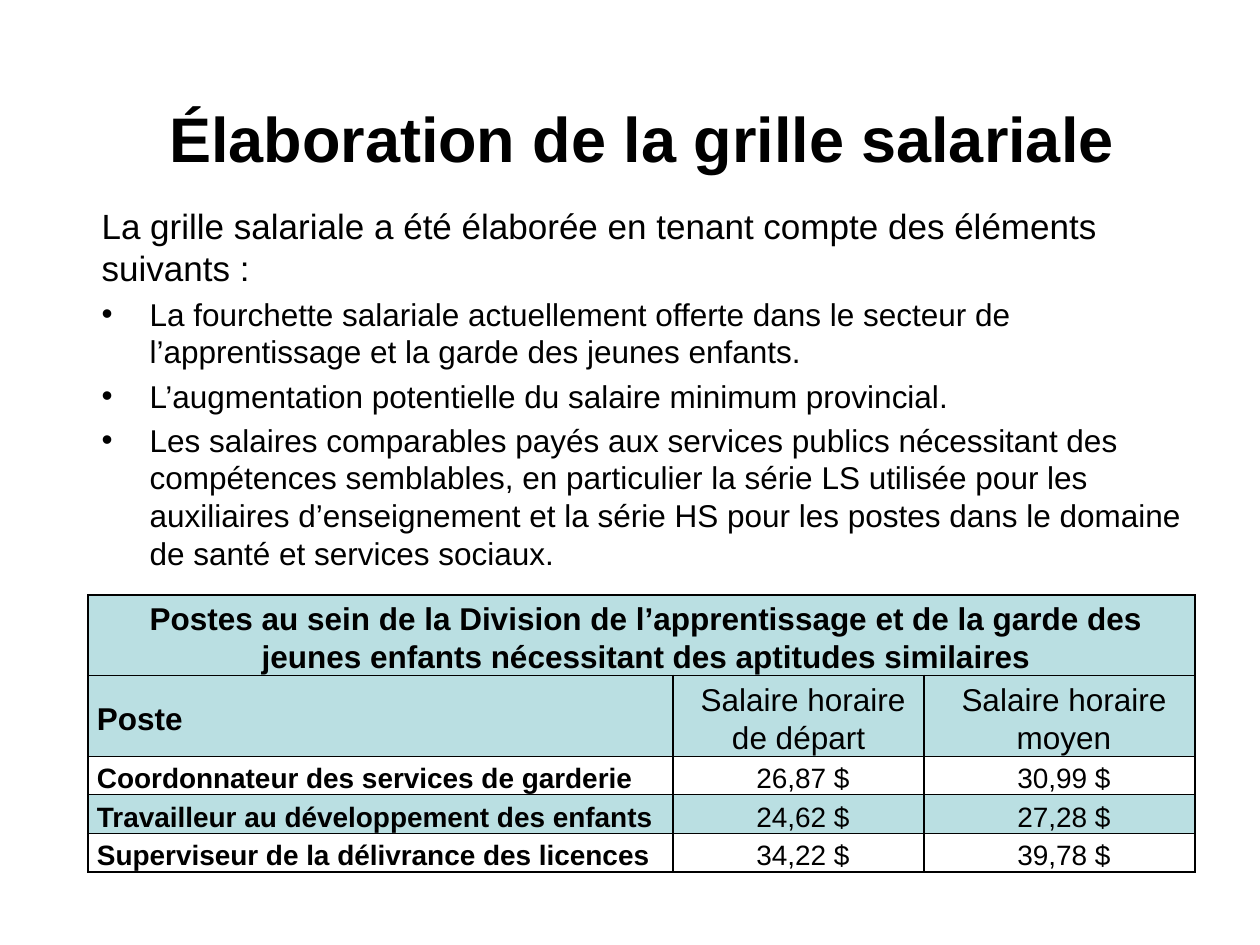
import dataclasses

import pptx
import pptx.dml.color
import pptx.enum.text
import pptx.oxml
import pptx.oxml.ns
import pptx.util

EMU_PER_PX = 914400 / 126
ALIGN = pptx.enum.text.PP_ALIGN
ANCHOR = pptx.enum.text.MSO_ANCHOR
NAMESPACE = pptx.oxml.ns.nsdecls("a")


@dataclasses.dataclass(frozen=True)
class Theme:
    font: str = "Arial"
    ink: str = "000000"
    tint: str = "BADFE2"
    paper: str = "FFFFFF"
    title: int = 36
    lead: int = 20
    text: int = 18
    small: int = 16


THEME = Theme()


def px(length):
    return pptx.util.Emu(round(length * EMU_PER_PX))


def color(value):
    return pptx.dml.color.RGBColor.from_string(value)


def write(para, text, *, size, bold=False, align=ALIGN.LEFT,
          before=0, spacing=1.0, hang=0, bullet=None):
    """Fill a paragraph; hang is the indent in px of the text after its bullet."""
    properties = para._p.get_or_add_pPr()
    properties.set("marL", str(px(hang)))
    properties.set("indent", str(px(-hang)))
    para.alignment = align
    para.line_spacing = spacing
    para.space_before = pptx.util.Pt(before)
    para.space_after = pptx.util.Pt(0)
    mark = f'<a:buChar {NAMESPACE} char="{bullet}"/>' if bullet else f"<a:buNone {NAMESPACE}/>"
    properties.append(pptx.oxml.parse_xml(mark))
    span = para.add_run()
    span.text = text
    span.font.name = THEME.font
    span.font.size = pptx.util.Pt(size)
    span.font.bold = bold
    span.font.color.rgb = color(THEME.ink)


class SlideBuilder:
    def __init__(self, deck, theme):
        self.theme = theme
        self.page = deck.slides.add_slide(deck.slide_layouts[1])

    def place(self, box, left, top, width, height, anchor):
        box.left, box.top, box.width, box.height = map(px, (left, top, width, height))
        frame = box.text_frame
        frame.word_wrap = True
        frame.auto_size = pptx.enum.text.MSO_AUTO_SIZE.NONE
        frame.vertical_anchor = anchor
        return frame

    def title(self, text, *bounds):
        frame = self.place(self.page.shapes.title, *bounds, ANCHOR.MIDDLE)
        write(frame.paragraphs[0], text, size=self.theme.title, bold=True, align=ALIGN.CENTER)

    def body(self, lead, points, *bounds):
        frame = self.place(self.page.placeholders[1], *bounds, ANCHOR.TOP)
        write(frame.paragraphs[0], lead, size=self.theme.lead)
        for point in points:
            write(frame.add_paragraph(), point, size=self.theme.text,
                  before=self.theme.text * 0.2, hang=48, bullet="•")

    def cell(self, cell, text, fill, **style):
        cell.margin_left, cell.margin_top = px(9), px(5)
        cell.margin_right = cell.margin_bottom = 0
        cell.vertical_anchor = ANCHOR.MIDDLE
        cell.fill.solid()
        cell.fill.fore_color.rgb = color(fill)
        properties = cell._tc.get_or_add_tcPr()
        for index, side in enumerate("LRTB"):
            properties.insert(index, pptx.oxml.parse_xml(
                f'<a:ln{side} {NAMESPACE} w="12700"><a:solidFill>'
                f'<a:srgbClr val="{self.theme.ink}"/></a:solidFill></a:ln{side}>'))
        if text:
            write(cell.text_frame.paragraphs[0], text, spacing=1.07, **style)

    def table(self, heading, header, rows, left, top, widths, heights):
        """Draw a merged heading, a header row and rows whose first column is bold."""
        lines = [[heading] + [""] * (len(widths) - 1), header, *rows]
        grid = self.page.shapes.add_table(
            len(lines), len(widths), px(left), px(top),
            px(sum(widths)), px(sum(heights))).table
        grid.first_row = grid.horz_banding = False
        for column, width in zip(grid.columns, widths):
            column.width = px(width)
        for row, height in zip(grid.rows, heights):
            row.height = px(height)
        grid.cell(0, 0).merge(grid.cell(0, len(widths) - 1))
        for r, line in enumerate(lines):
            fill = self.theme.tint if r in (0, 1, 3) else self.theme.paper
            size = self.theme.text if r < 2 else self.theme.small
            for c, text in enumerate(line):
                align = ALIGN.CENTER if r == 0 or c > 0 else ALIGN.LEFT
                self.cell(grid.cell(r, c), text, fill, size=size, bold=c == 0, align=align)


def main():
    deck = pptx.Presentation()
    deck.slide_width, deck.slide_height = px(1260), px(945)
    slide = SlideBuilder(deck, THEME)
    slide.title("Élaboration de la grille salariale", 89, 60, 1106, 154)
    slide.body(
        "La grille salariale a été élaborée en tenant compte des éléments suivants :",
        [
            "La fourchette salariale actuellement offerte dans le secteur de "
            "l’apprentissage et la garde des jeunes enfants.",
            "L’augmentation potentielle du salaire minimum provincial.",
            "Les salaires comparables payés aux services publics nécessitant des "
            "compétences semblables, en particulier la série LS utilisée pour les "
            "auxiliaires d’enseignement et la série HS pour les postes dans le domaine "
            "de santé et services sociaux.",
        ],
        89, 198, 1106, 544)
    slide.table(
        "Postes au sein de la Division de l’apprentissage et de la garde des "
        "jeunes enfants nécessitant des aptitudes similaires",
        ["Poste", "Salaire horaire de départ ", "Salaire horaire moyen"],
        [
            ["Coordonnateur des services de garderie", "26,87 $", "30,99 $"],
            ["Travailleur au développement des enfants", "24,62 $", "27,28 $"],
            ["Superviseur de la délivrance des licences", "34,22 $", "39,78 $"],
        ],
        88, 595, widths=[585, 251, 271], heights=[80, 81, 38, 39, 38])
    deck.save("out.pptx")


if __name__ == "__main__":
    main()
